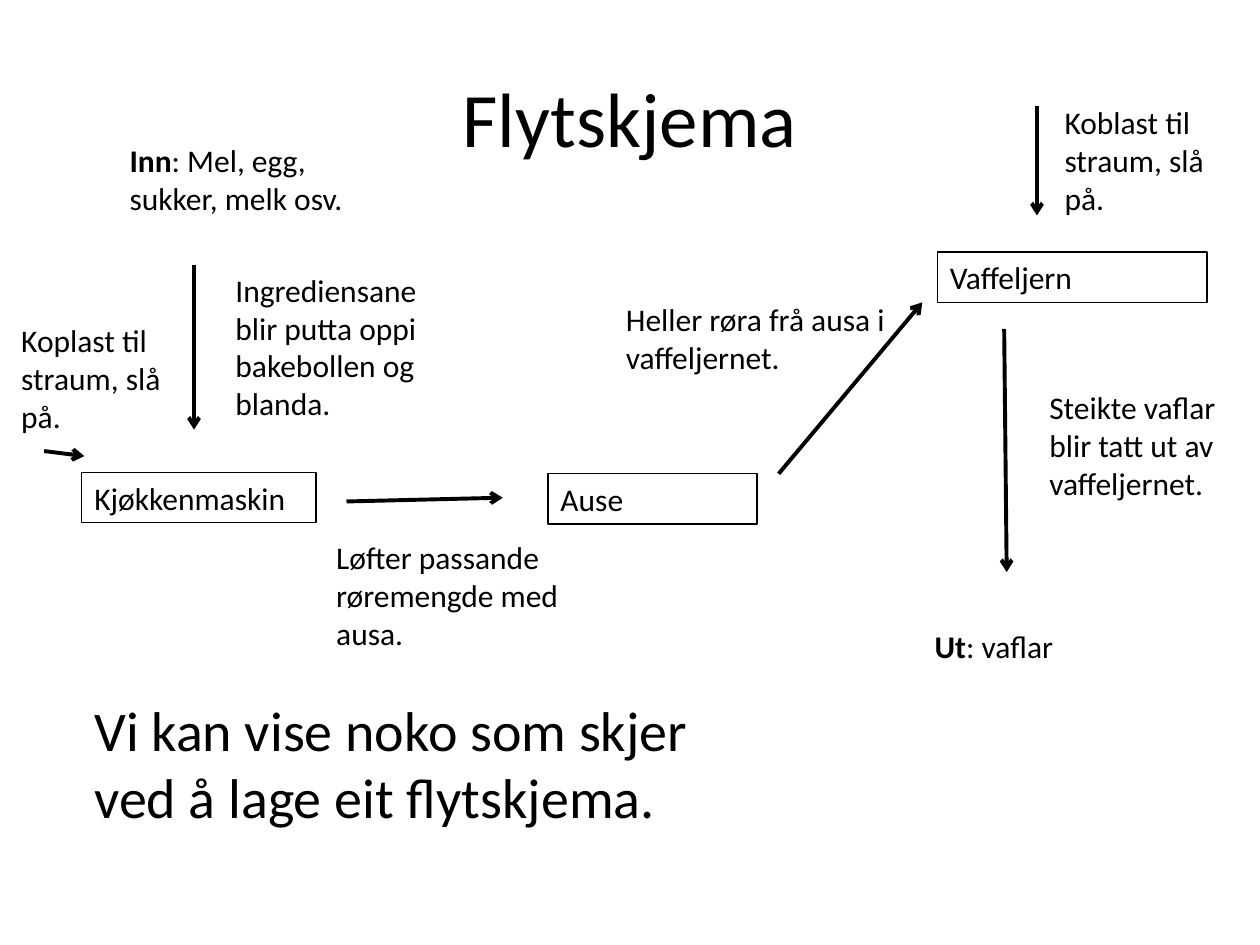
from dataclasses import dataclass

from lxml.etree import SubElement
from pptx import Presentation
from pptx.dml.color import RGBColor
from pptx.enum.shapes import MSO_CONNECTOR, MSO_SHAPE
from pptx.enum.text import MSO_ANCHOR, MSO_AUTO_SIZE, PP_ALIGN
from pptx.oxml.ns import qn
from pptx.util import Inches, Pt

BLACK = "000000"
FONT = "Calibri"
BOX_HEIGHT = 0.4


@dataclass
class Label:
    x: float
    y: float
    w: float
    h: float
    text: str
    lead: str = ""  # bold opening word
    size: int = 18
    align: PP_ALIGN = PP_ALIGN.LEFT
    anchor: MSO_ANCHOR = MSO_ANCHOR.TOP
    grow: bool = True


@dataclass
class Box:
    x: float
    y: float
    w: float
    text: str


@dataclass
class Arrow:
    x1: float
    y1: float
    x2: float
    y2: float


LABELS = [
    Label(0.5, 0.3, 9, 1.25, "Flytskjema", size=44, align=PP_ALIGN.CENTER,
          anchor=MSO_ANCHOR.MIDDLE, grow=False),
    Label(0.65, 5.47, 5.29, 1.35,
          "Vi kan vise noko som skjer ved å lage eit flytskjema.",
          size=32, grow=False),
    Label(0.93, 1.07, 1.97, 0.71, ": Mel, egg, sukker, melk osv.", lead="Inn"),
    Label(1.77, 2.1, 1.81, 1.31,
          "Ingrediensane blir putta oppi bakebollen og blanda."),
    Label(2.57, 4.22, 2.13, 1.01, "Løfter passande røremengde med ausa."),
    Label(4.87, 2.33, 2.36, 0.71, "Heller røra frå ausa i vaffeljernet."),
    Label(7.32, 4.93, 2.26, 0.4, ": vaflar", lead="Ut"),
    Label(8.23, 3.03, 1.6, 1.01,
          "Steikte vaflar blir tatt ut av vaffeljernet."),
    Label(8.35, 0.77, 1.35, 1.01, "Koblast til straum, slå på."),
    Label(0.07, 2.5, 1.35, 1.01, "Koplast til straum, slå på."),
]

BOXES = [
    Box(7.44, 2, 2.14, "Vaffeljern"),
    Box(0.65, 3.75, 1.86, "Kjøkkenmaskin"),
    Box(4.35, 3.76, 1.66, "Ause"),
]

ARROWS = [
    Arrow(2.75, 3.98, 3.99, 3.95),
    Arrow(6.18, 3.76, 7.32, 2.4),
    Arrow(1.54, 2.1, 1.54, 3.41),
    Arrow(7.97, 2.61, 7.99, 4.54),
    Arrow(8.23, 0.84, 8.23, 1.71),
    Arrow(0.35, 3.58, 0.67, 3.62),
]


def rgb(color: str) -> RGBColor:
    return RGBColor.from_string(color)


def add_run(p, text: str, size: int = 18, bold: bool = False) -> None:
    r = p.add_run()
    r.text = text
    r.font.name = FONT
    r.font.size = Pt(size)
    r.font.bold = bold
    r.font.color.rgb = rgb(BLACK)


def draw_label(s, label: Label) -> None:
    sp = s.shapes.add_textbox(Inches(label.x), Inches(label.y),
                              Inches(label.w), Inches(label.h))
    tf = sp.text_frame
    tf.word_wrap = True
    tf.vertical_anchor = label.anchor
    if label.grow:
        tf.auto_size = MSO_AUTO_SIZE.SHAPE_TO_FIT_TEXT
    p = tf.paragraphs[0]
    p.alignment = label.align
    if label.lead:
        add_run(p, label.lead, label.size, bold=True)
    add_run(p, label.text, label.size)


def draw_box(s, box: Box) -> None:
    sp = s.shapes.add_shape(MSO_SHAPE.RECTANGLE, Inches(box.x), Inches(box.y),
                            Inches(box.w), Inches(BOX_HEIGHT))
    sp.shadow.inherit = False
    sp.fill.background()
    sp.line.color.rgb = rgb(BLACK)
    sp.line.width = Pt(0.75)
    tf = sp.text_frame
    tf.word_wrap = True
    tf.auto_size = MSO_AUTO_SIZE.SHAPE_TO_FIT_TEXT
    tf.vertical_anchor = MSO_ANCHOR.TOP
    p = tf.paragraphs[0]
    p.alignment = PP_ALIGN.LEFT
    add_run(p, box.text)


def draw_arrow(s, arrow: Arrow) -> None:
    line = s.shapes.add_connector(MSO_CONNECTOR.STRAIGHT,
                                  Inches(arrow.x1), Inches(arrow.y1),
                                  Inches(arrow.x2), Inches(arrow.y2))
    line.line.color.rgb = rgb(BLACK)
    line.line.width = Pt(2.25)
    SubElement(line.line._get_or_add_ln(), qn("a:tailEnd"), type="arrow")
    SubElement(line._element.spPr, qn("a:effectLst"))


def main() -> None:
    prs = Presentation()
    prs.slide_width, prs.slide_height = Inches(10), Inches(7.5)
    s = prs.slides.add_slide(prs.slide_layouts[6])
    for label in LABELS:
        draw_label(s, label)
    for box in BOXES:
        draw_box(s, box)
    for arrow in ARROWS:
        draw_arrow(s, arrow)
    prs.save("out.pptx")


if __name__ == "__main__":
    main()
